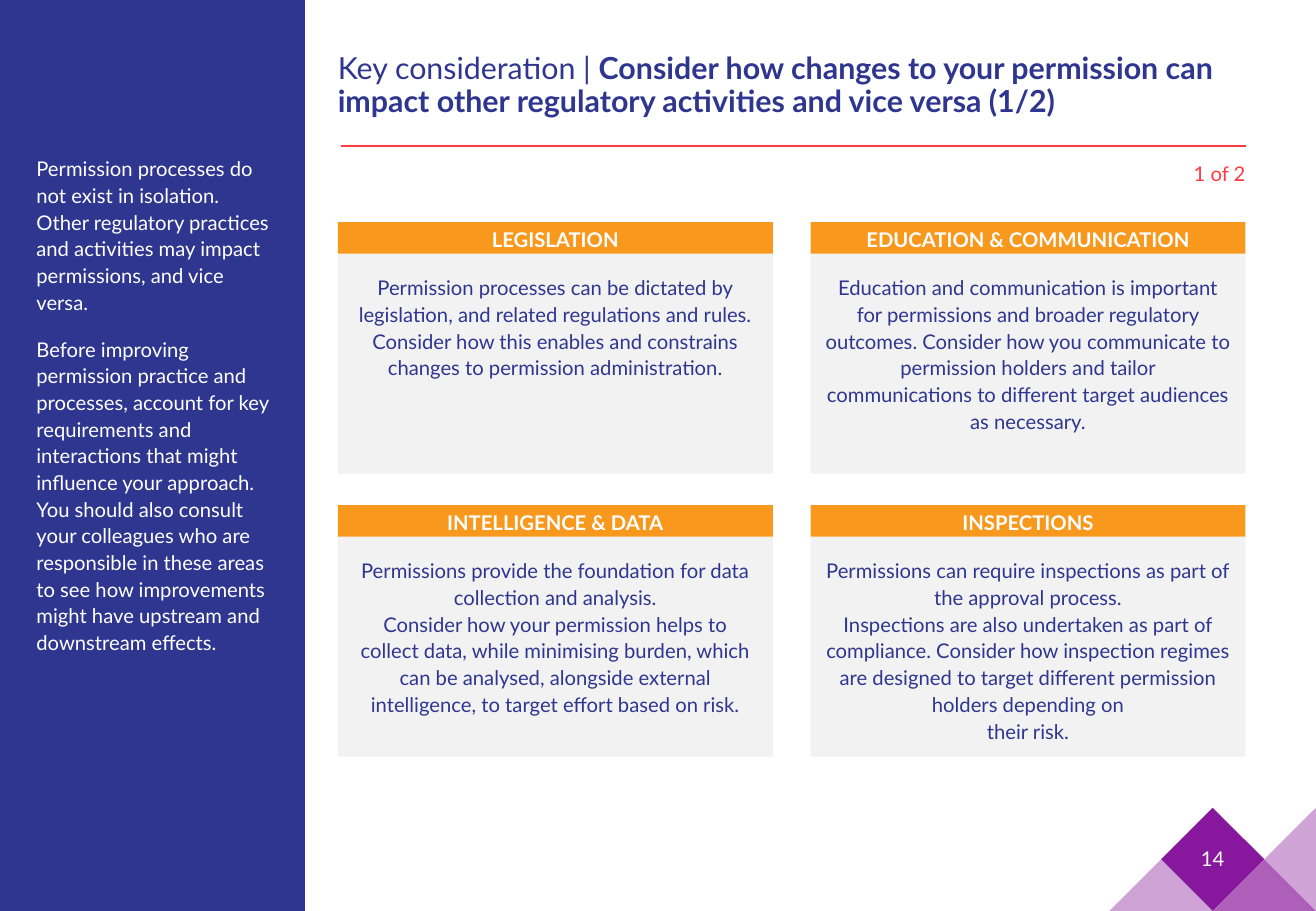
from pptx import Presentation
from pptx.dml.color import RGBColor
from pptx.enum import shapes, text
from pptx.oxml import ns
from pptx.util import Inches, Pt
from lxml import etree

FONT = "Lato"
SLIDE_WIDTH, SLIDE_HEIGHT = 10.83, 7.5
COLORS = {
    "navy": "2E368F", "white": "FFFFFF", "red": "FF3A40", "orange": "F8981D",
    "grey": "F2F2F2", "purple": "87189D", "lilac": "D0A3D7", "mauve": "AD5FB9",
}
SIDEBAR = [
    "Permission processes do not exist in isolation. Other regulatory practices "
    "and activities may impact permissions, and vice versa.",
    "Before improving permission practice and processes, account for "
    "key requirements and interactions that might influence your approach. "
    "You should also consult your colleagues who are responsible in these areas "
    "to see how improvements might have upstream and downstream effects.",
]
CARDS = [
    ("LEGISLATION",
     ["Permission processes can be dictated by legislation, and related regulations "
      "and rules. Consider how this enables and constrains changes to permission "
      "administration."]),
    ("EDUCATION & COMMUNICATION",
     ["Education and communication is important for permissions and broader "
      "regulatory outcomes. Consider how you communicate to permission holders and "
      "tailor communications to different target audiences as necessary."]),
    ("INTELLIGENCE & DATA",
     ["Permissions provide the foundation for data collection and analysis.",
      "Consider how your permission helps to collect data, while minimising burden, "
      "which can be analysed, alongside external intelligence, to target effort "
      "based on risk."]),
    ("INSPECTIONS",
     ["Permissions can require inspections as part of the approval process.",
      "Inspections are also undertaken as part of compliance. Consider how "
      "inspection regimes are designed to target different permission holders "
      "depending on",
      "their risk."]),
]


def rgb(name):
    return RGBColor.from_string(COLORS[name])


def paint(shape, color):
    shape.shadow.inherit = False
    shape.fill.solid()
    shape.fill.fore_color.rgb = rgb(color)
    shape.line.fill.background()


def add_rectangle(slide, box, color):
    shape = slide.shapes.add_shape(shapes.MSO_SHAPE.RECTANGLE, *map(Inches, box))
    paint(shape, color)
    return shape


def add_text_box(slide, box):
    return slide.shapes.add_textbox(*map(Inches, box))


def set_frame(shape, insets=(0, 0.05, 0, 0.05), anchor=text.MSO_ANCHOR.TOP):
    """Set wrapping, anchor and left, top, right, bottom insets; return the frame."""
    frame = shape.text_frame
    frame.word_wrap = True
    frame.vertical_anchor = anchor
    (frame.margin_left, frame.margin_top,
     frame.margin_right, frame.margin_bottom) = map(Inches, insets)
    return frame


def add_run(paragraph, words, color, size=12, bold=False):
    run = paragraph.add_run()
    run.text = words
    run.font.name = FONT
    run.font.size = Pt(size)
    run.font.bold = bold
    run.font.color.rgb = rgb(color)


def write_lines(paragraph, lines, color, align=text.PP_ALIGN.CENTER, bold=False):
    """Write lines into one paragraph, parted by line breaks."""
    paragraph.alignment = align
    paragraph.line_spacing = 1.1
    for index, line in enumerate(lines):
        if index:
            paragraph.add_line_break()
        add_run(paragraph, line, color, bold=bold)


def add_sidebar(slide, left, top, width, height):
    add_rectangle(slide, (left, top, width, height), "navy")
    box = add_text_box(slide, (left + 0.3, top + 1.22, width - 0.58, 5.6))
    frame = set_frame(box)
    for index, words in enumerate(SIDEBAR):
        paragraph = frame.add_paragraph() if index else frame.paragraphs[0]
        write_lines(paragraph, [words], "white", text.PP_ALIGN.LEFT)
        if index:
            paragraph.space_before = Pt(12)


def add_header(slide, left, top, width):
    """Add the title, the rule below it and the part counter."""
    title = add_text_box(slide, (left, top, width + 0.06, 0.65))
    paragraph = set_frame(title, anchor=text.MSO_ANCHOR.BOTTOM).paragraphs[0]
    paragraph.line_spacing = 0.9
    add_run(paragraph, "Key consideration | ", "navy", 18)
    add_run(paragraph, "Consider how changes to your permission can impact other "
            "regulatory activities and vice versa (1/2)", "navy", 18, True)

    right, rule_top = left + width, top + 0.82
    rule = slide.shapes.add_connector(
        shapes.MSO_CONNECTOR.STRAIGHT,
        *map(Inches, (left + 0.03, rule_top, right, rule_top)))
    rule.line.color.rgb = rgb("red")
    rule.line.width = Pt(1.25)
    etree.SubElement(rule._element.spPr, ns.qn("a:effectLst"))

    counter = add_text_box(slide, (right - 1.93, rule_top + 0.06, 1.93, 0.34))
    write_lines(set_frame(counter).paragraphs[0], ["1 of 2"], "red",
                text.PP_ALIGN.RIGHT)


def add_card(slide, left, top, width, height, heading, lines):
    bar_height = 0.26
    body = add_rectangle(
        slide, (left, top + bar_height, width, height - bar_height), "grey")
    frame = set_frame(body, (0.12, 0.16, 0.12, 0.12))
    write_lines(frame.paragraphs[0], lines, "navy")
    bar = add_rectangle(slide, (left, top, width, bar_height), "orange")
    frame = set_frame(bar, (0.08,) * 4, text.MSO_ANCHOR.MIDDLE)
    write_lines(frame.paragraphs[0], [heading], "white", bold=True)


def add_cards(slide, left, top, width, height):
    """Lay the cards out in two columns and two rows."""
    card_width, card_height = 3.58, 2.07
    for index, (heading, lines) in enumerate(CARDS):
        row, column = divmod(index, 2)
        add_card(slide, left + column * (width - card_width),
                 top + row * (height - card_height),
                 card_width, card_height, heading, lines)


def add_polygon(slide, points, color):
    corners = [(Inches(x), Inches(y)) for x, y in points]
    builder = slide.shapes.build_freeform(*corners[0])
    builder.add_line_segments(corners[1:], close=True)
    paint(builder.convert_to_shape(), color)


def add_page_corner(slide, right, bottom, number):
    """Add the diamond and triangles on a half-diamond grid, with the page number."""
    half = 0.425

    def grid(*steps):
        return [(right - x * half, bottom - y * half) for x, y in steps]

    add_polygon(slide, grid((3, 1), (2, 2), (1, 1), (2, 0)), "purple")
    add_polygon(slide, grid((0, 2), (0, 0), (1, 1)), "lilac")
    add_polygon(slide, grid((3, 1), (2, 0), (4, 0)), "lilac")
    add_polygon(slide, grid((0, 0), (2, 0), (1, 1)), "mauve")

    center_x, center_y = grid((2, 1))[0]
    box = add_text_box(slide, (center_x - 0.24, center_y - 0.21, 0.48, 0.4))
    frame = set_frame(box, (0.1, 0.05, 0.1, 0.05), text.MSO_ANCHOR.MIDDLE)
    paragraph = frame.paragraphs[0]
    paragraph.alignment = text.PP_ALIGN.CENTER
    add_run(paragraph, number, "white")


def main():
    presentation = Presentation()
    presentation.slide_width = Inches(SLIDE_WIDTH)
    presentation.slide_height = Inches(SLIDE_HEIGHT)
    slide = presentation.slides.add_slide(presentation.slide_layouts[6])
    add_sidebar(slide, 0, 0, 2.51, SLIDE_HEIGHT)
    add_header(slide, 2.78, 0.38, 7.47)
    add_cards(slide, 2.78, 1.83, 7.47, 4.4)
    add_page_corner(slide, SLIDE_WIDTH, SLIDE_HEIGHT, "14")
    presentation.save("out.pptx")


if __name__ == "__main__":
    main()
